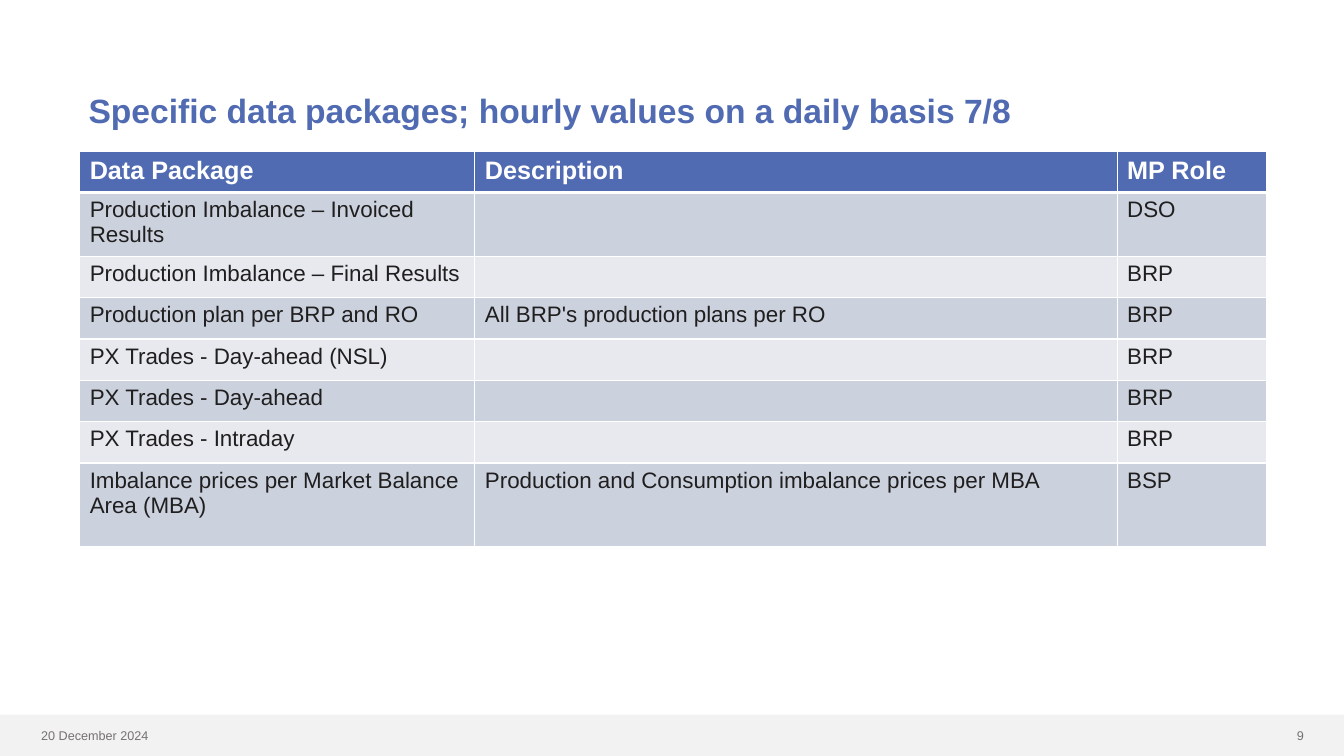
from dataclasses import dataclass

from lxml.etree import SubElement
from pptx import Presentation
from pptx.dml.color import RGBColor
from pptx.enum.shapes import MSO_SHAPE
from pptx.enum.text import MSO_ANCHOR, PP_ALIGN
from pptx.oxml.ns import qn
from pptx.util import Inches, Pt


@dataclass(frozen=True)
class Theme:
    font: str = "Arial"
    blue: str = "516BB3"
    white: str = "FFFFFF"
    ink: str = "201F1F"
    footer_text: str = "767171"
    footer_band: str = "F2F2F2"
    odd_row: str = "CCD1DE"
    even_row: str = "E7E9EF"
    title_size: int = 24
    header_size: int = 18
    body_size: int = 16
    footer_size: int = 9
    thin_line: int = 1
    thick_line: int = 3


THEME = Theme()

COLUMN_WIDTHS = (3.92, 6.37, 1.48)
ROW_HEIGHTS = (0.41, 0.58, 0.41, 0.41, 0.41, 0.41, 0.41, 0.83)
PACKAGES = (
    ("Data Package", "Description", "MP Role"),
    ("Production Imbalance – Invoiced Results", "", "DSO"),
    ("Production Imbalance – Final Results", "", "BRP"),
    ("Production plan per BRP and RO", "All BRP's production plans per RO", "BRP"),
    ("PX Trades - Day-ahead (NSL)", "", "BRP"),
    ("PX Trades - Day-ahead", "", "BRP"),
    ("PX Trades - Intraday", "", "BRP"),
    ("Imbalance prices per Market Balance Area (MBA)",
     "Production and Consumption imbalance prices per MBA", "BSP"),
)


def format_runs(paragraph, size, color, bold=False):
    for run in paragraph.runs:
        run.font.name = THEME.font
        run.font.size = Pt(size)
        run.font.bold = bold
        run.font.color.rgb = RGBColor.from_string(color)


def add_text(slide, text, left, top, width, height, size, color, bold=False,
             alignment=PP_ALIGN.LEFT, anchor=MSO_ANCHOR.TOP, line_spacing=1.0):
    box = slide.shapes.add_textbox(Inches(left), Inches(top), Inches(width), Inches(height))
    frame = box.text_frame
    frame.word_wrap = True
    frame.vertical_anchor = anchor
    frame.text = text
    paragraph = frame.paragraphs[0]
    paragraph.alignment = alignment
    paragraph.line_spacing = line_spacing
    format_runs(paragraph, size, color, bold)


def add_footer(slide, date, number):
    band = slide.shapes.add_shape(
        MSO_SHAPE.RECTANGLE, Inches(0), Inches(7.09), Inches(13.33), Inches(0.41))
    band.shadow.inherit = False
    band.fill.solid()
    band.fill.fore_color.rgb = RGBColor.from_string(THEME.footer_band)
    band.line.fill.background()
    add_text(slide, number, 12.21, 7.17, 0.82, 0.25, THEME.footer_size,
             THEME.footer_text, alignment=PP_ALIGN.RIGHT)
    add_text(slide, date, 0.31, 7.17, 2.12, 0.25, THEME.footer_size, THEME.footer_text)


def style_cell(cell, fill, top_line, bottom_line):
    """Give a cell its white borders, then its fill, in schema order."""
    properties = cell._tc.get_or_add_tcPr()
    widths = {"lnL": THEME.thin_line, "lnR": THEME.thin_line,
              "lnT": top_line, "lnB": bottom_line}
    for side, width in widths.items():
        line = SubElement(properties, qn(f"a:{side}"), w=str(Pt(width)))
        line_fill = SubElement(line, qn("a:solidFill"))
        SubElement(line_fill, qn("a:srgbClr"), val=THEME.white)
    cell.fill.solid()
    cell.fill.fore_color.rgb = RGBColor.from_string(fill)


def add_package_table(slide, left, top):
    table = slide.shapes.add_table(
        len(PACKAGES), len(COLUMN_WIDTHS), Inches(left), Inches(top),
        Inches(sum(COLUMN_WIDTHS)), Inches(sum(ROW_HEIGHTS))).table
    for column, width in zip(table.columns, COLUMN_WIDTHS):
        column.width = Inches(width)
    for row, height in zip(table.rows, ROW_HEIGHTS):
        row.height = Inches(height)

    for row_index, texts in enumerate(PACKAGES):
        is_header = row_index == 0
        if is_header:
            fill, size, color = THEME.blue, THEME.header_size, THEME.white
        else:
            fill = THEME.odd_row if row_index % 2 else THEME.even_row
            size, color = THEME.body_size, THEME.ink
        top_line = THEME.thick_line if row_index == 1 else THEME.thin_line
        bottom_line = THEME.thick_line if is_header else THEME.thin_line
        for column_index, text in enumerate(texts):
            cell = table.cell(row_index, column_index)
            style_cell(cell, fill, top_line, bottom_line)
            if text:
                cell.text_frame.text = text
                format_runs(cell.text_frame.paragraphs[0], size, color, is_header)


def main():
    presentation = Presentation()
    presentation.slide_width = Inches(13.33)
    presentation.slide_height = Inches(7.5)
    slide = presentation.slides.add_slide(presentation.slide_layouts[6])
    add_footer(slide, "20 December 2024", "9")
    add_text(slide, "Specific data packages; hourly values on a daily basis 7/8",
             0.78, 0.39, 11.73, 1.45, THEME.title_size, THEME.blue, bold=True,
             anchor=MSO_ANCHOR.MIDDLE, line_spacing=0.9)
    add_package_table(slide, 0.79, 1.5)
    presentation.save("out.pptx")


if __name__ == "__main__":
    main()
